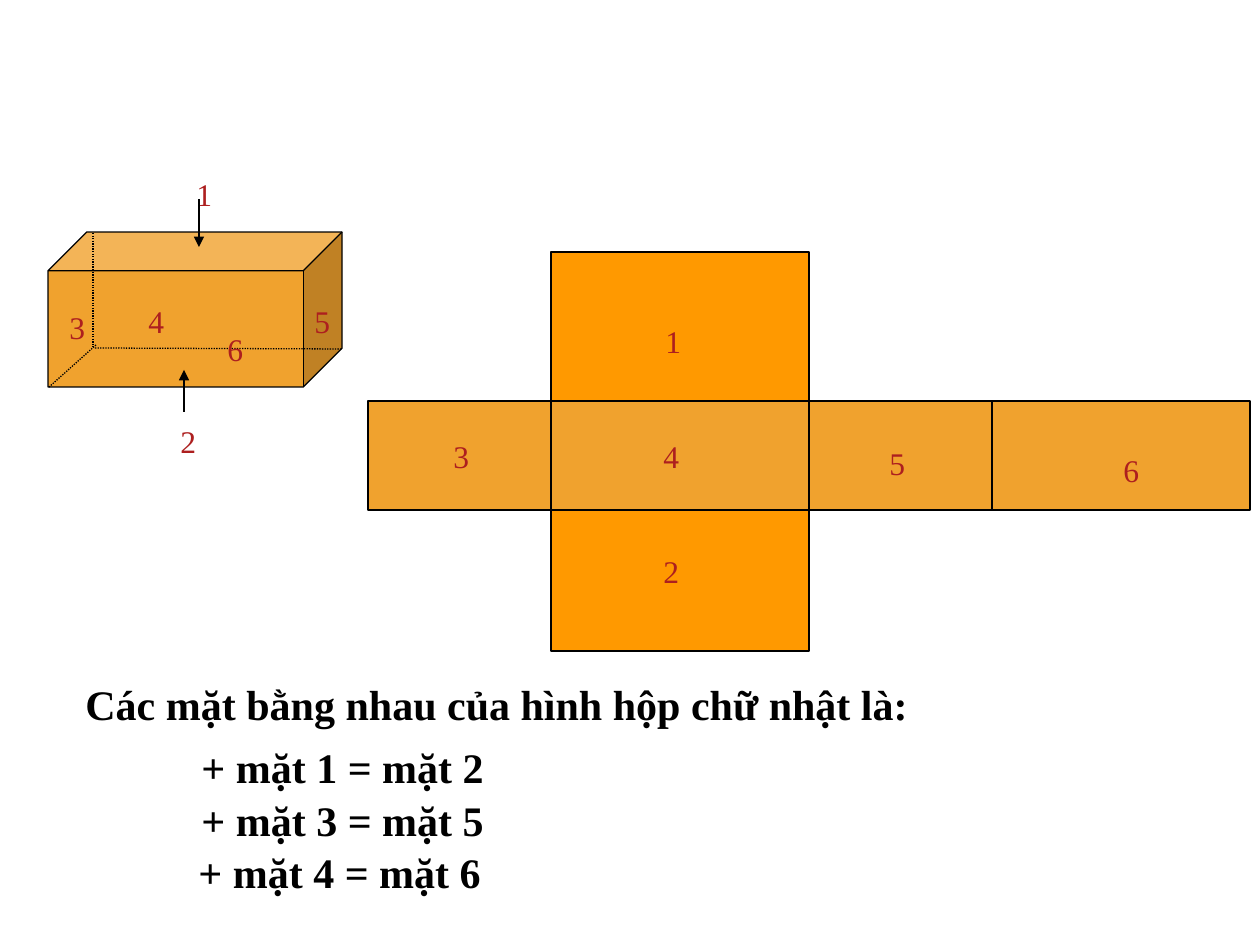
import pptx
import pptx.dml.color
import pptx.enum.dml
import pptx.enum.shapes
import pptx.enum.text
import pptx.oxml.ns
import pptx.util
from lxml import etree

SHAPES = pptx.enum.shapes.MSO_SHAPE
FONT = "Times New Roman"
BLACK, RED, AMBER, ORANGE = "000000", "AD1F1F", "F0A22E", "FF9900"


def px(length):
    """Turn a length in px into EMU."""
    return round(length * 914400 / 126)


def color(value):
    """Turn a hex string into a colour."""
    return pptx.dml.color.RGBColor.from_string(value)


def add_text(slide, left, top, width, height, words, size, ink, bold=False):
    """Write one line of text in a box."""
    box = slide.shapes.add_textbox(px(left), px(top), px(width), px(height))
    frame = box.text_frame
    frame.word_wrap = True
    frame.auto_size = pptx.enum.text.MSO_AUTO_SIZE.SHAPE_TO_FIT_TEXT
    frame.text = words
    font = frame.paragraphs[0].runs[0].font
    font.name, font.size, font.bold = FONT, pptx.util.Pt(size), bold
    font.color.rgb = color(ink)


def add_solid(slide, preset, left, top, width, height, fill):
    """Draw a filled shape with a thin black outline."""
    solid = slide.shapes.add_shape(preset, px(left), px(top), px(width), px(height))
    solid.shadow.inherit = False
    solid.fill.solid()
    solid.fill.fore_color.rgb = color(fill)
    solid.line.color.rgb = color(BLACK)
    solid.line.width = pptx.util.Pt(0.75)


def add_line(slide, left, top, ends, arrow=False):
    """Draw a dotted edge or a solid arrow between two relative points."""
    x1, y1, x2, y2 = ends
    edge = slide.shapes.add_connector(
        pptx.enum.shapes.MSO_CONNECTOR.STRAIGHT,
        px(left + x1), px(top + y1), px(left + x2), px(top + y2))
    edge.line.color.rgb = color(BLACK)
    edge.line.width = pptx.util.Pt(0.75)
    if arrow:
        outline = edge.line._get_or_add_ln()
        etree.SubElement(outline, pptx.oxml.ns.qn("a:tailEnd"), type="triangle")
    else:
        edge.line.dash_style = pptx.enum.dml.MSO_LINE.ROUND_DOT
    etree.SubElement(edge._element.spPr, pptx.oxml.ns.qn("a:effectLst"))


def add_net(slide, left, top):
    """Unfold the box into six numbered faces."""
    columns = [0, 183, 441, 624, 882]
    rows = [0, 149, 258, 399]
    faces = [
        ("2", 1, 2, ORANGE, 283, 294),
        ("3", 0, 1, AMBER, 73, 179),
        ("4", 1, 1, AMBER, 283, 179),
        ("5", 2, 1, AMBER, 509, 186),
        ("1", 1, 0, ORANGE, 285, 64),
        ("6", 3, 1, AMBER, 743, 193),
    ]
    for number, column, row, fill, label_x, label_y in faces:
        add_solid(slide, SHAPES.RECTANGLE, left + columns[column], top + rows[row],
                  columns[column + 1] - columns[column], rows[row + 1] - rows[row], fill)
        add_text(slide, left + label_x, top + label_y, 50, 50, number, 18, RED)


def add_cuboid(slide, left, top, width, height):
    """Draw the closed box with hidden edges, face numbers and arrows."""
    add_solid(slide, SHAPES.CUBE, left, top, width, height, AMBER)
    for hidden_edge in [(45, 1, 45, 115), (47, 116, 294, 117), (48, 113, 0, 156)]:
        add_line(slide, left, top, hidden_edge)
    labels = {"3": (9, 70), "6": (167, 92), "4": (88, 64),
              "5": (254, 64), "1": (136, -63), "2": (120, 184)}
    for number, (x, y) in labels.items():
        add_text(slide, left + x, top + y, 40, 50, number, 18, RED)
    for pointer in [(136, 180, 136, 138), (151, -33, 151, 15)]:
        add_line(slide, left, top, pointer, arrow=True)


def add_conclusion(slide, left, top):
    """State which faces are equal."""
    statements = [
        ("Các mặt bằng nhau của hình hộp chữ nhật là:", 0, 0, 1061),
        ("+ mặt 1 = mặt 2", 116, 63, 400),
        ("+ mặt 3 = mặt 5", 116, 116, 420),
        ("+ mặt 4 = mặt 6", 113, 168, 390),
    ]
    for words, x, y, width in statements:
        add_text(slide, left + x, top + y, width, 63, words, 24, BLACK, bold=True)


def main():
    """Build the slide and save it."""
    deck = pptx.Presentation()
    deck.slide_width, deck.slide_height = px(1260), px(945)
    slide = deck.slides.add_slide(deck.slide_layouts[6])
    add_net(slide, 368, 252)
    add_conclusion(slide, 73, 672)
    add_cuboid(slide, 48, 232, 294, 155)
    deck.save("out.pptx")


if __name__ == "__main__":
    main()
